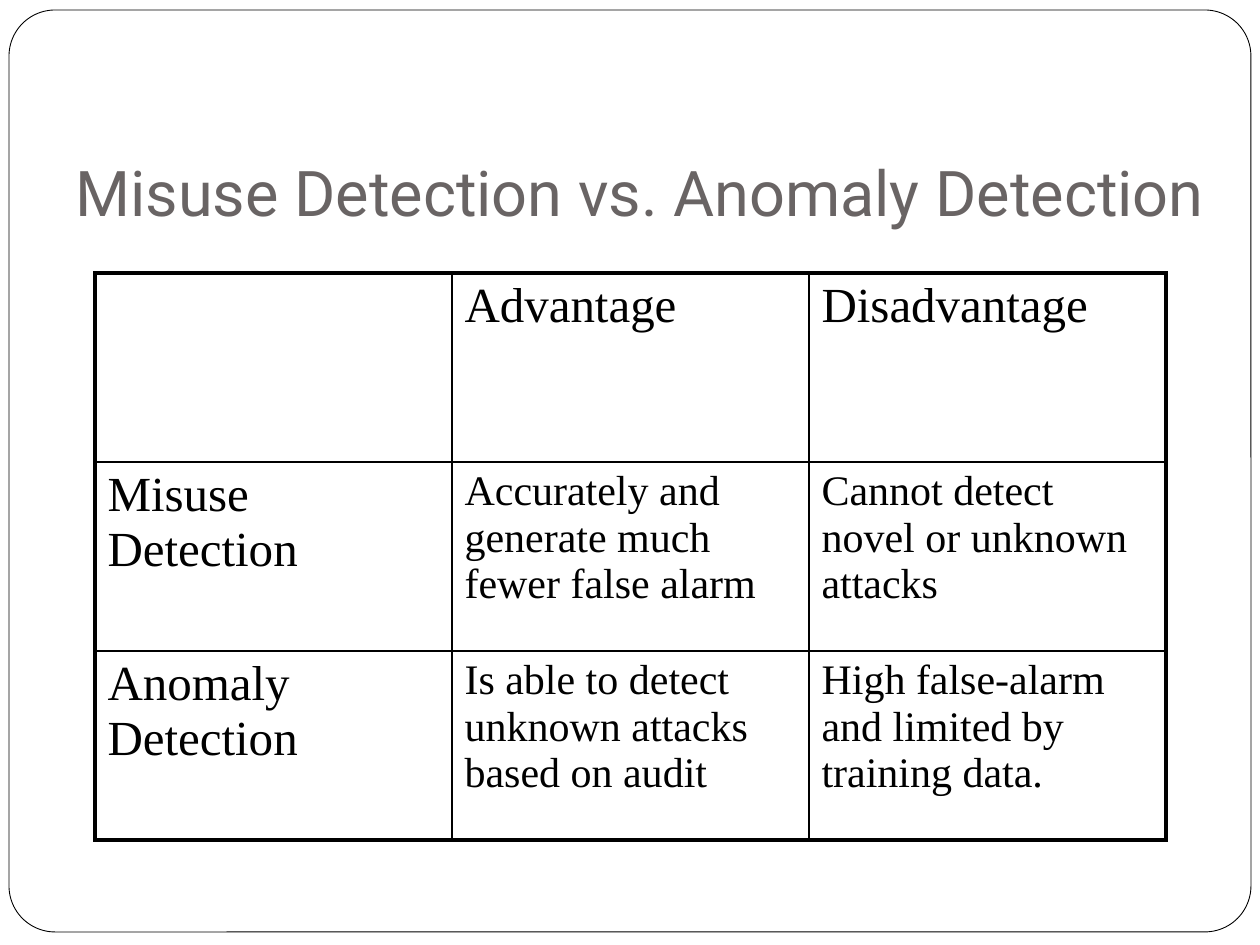
import lxml.etree
import pptx
import pptx.dml.color
import pptx.enum.shapes
import pptx.enum.text
import pptx.oxml.ns
import pptx.util

SCALE = 914400 / 126
COLORS = {"paper": "FFFFFF", "ink": "000000", "title": "696464"}
ROWS = [
    ["", "Advantage", "Disadvantage"],
    ["Misuse Detection", "Accurately and generate much fewer false alarm",
     "Cannot detect novel or unknown attacks"],
    ["Anomaly Detection", "Is able to detect unknown attacks based on audit",
     "High false-alarm and limited by training data."],
]
HEAD = {"name": "Times New Roman", "size": pptx.util.Pt(28)}
BODY = {"name": "Times New Roman", "size": pptx.util.Pt(24)}
TITLE = {"name": "Roboto", "size": pptx.util.Pt(36)}


def emu(px):
    return pptx.util.Emu(round(px * SCALE))


def color(name):
    return pptx.dml.color.RGBColor.from_string(COLORS[name])


def apply(target, values):
    for name, value in values.items():
        setattr(target, name, value)


def write(frame, text, font, ink):
    run = frame.paragraphs[0].add_run()
    run.text = text
    apply(run.font, font)
    run.font.color.rgb = color(ink)


def add_frame(slide, box):
    kind = pptx.enum.shapes.MSO_SHAPE.ROUNDED_RECTANGLE
    shape = slide.shapes.add_shape(kind, *map(emu, box))
    shape.adjustments[0] = 0.05
    shape.shadow.inherit = False
    shape.fill.solid()
    shape.fill.fore_color.rgb = color("paper")
    shape.line.color.rgb = color("ink")
    shape.line.width = pptx.util.Pt(0.5)


def add_title(slide, box, text):
    frame = slide.shapes.add_textbox(*map(emu, box)).text_frame
    apply(frame, {
        "word_wrap": True,
        "vertical_anchor": pptx.enum.text.MSO_ANCHOR.BOTTOM,
        "margin_bottom": pptx.util.Inches(0.1),
    })
    write(frame, text, TITLE, "title")


def set_edges(cell, widths):
    """Draw the cell's borders; widths are points keyed by side."""
    props = cell._tc.get_or_add_tcPr()
    for place, (side, width) in enumerate(widths.items()):
        line = lxml.etree.Element(pptx.oxml.ns.qn("a:ln" + side),
                                  w=str(pptx.util.Pt(width)))
        fill = lxml.etree.SubElement(line, pptx.oxml.ns.qn("a:solidFill"))
        lxml.etree.SubElement(fill, pptx.oxml.ns.qn("a:srgbClr"),
                              val=COLORS["ink"])
        props.insert(place, line)


def add_grid(slide, box, rows):
    high, wide = len(rows), len(rows[0])
    table = slide.shapes.add_table(high, wide, *map(emu, box)).table
    apply(table, {"first_row": False, "horz_banding": False})
    for column in table.columns:
        column.width = emu(box[2] // wide)
    for row in table.rows:
        row.height = emu(box[3] // high)
    for i, texts in enumerate(rows):
        for j, text in enumerate(texts):
            cell = table.cell(i, j)
            cell.fill.background()
            outer = {"L": j == 0, "R": j == wide - 1,
                     "T": i == 0, "B": i == high - 1}
            set_edges(cell, {side: 2.25 if edge else 1
                             for side, edge in outer.items()})
            if text:
                font = BODY if i and j else HEAD
                write(cell.text_frame, text, font, "ink")


def main():
    deck = pptx.Presentation()
    apply(deck, {"slide_width": emu(1260), "slide_height": emu(945)})
    slide = deck.slides.add_slide(deck.slide_layouts[6])
    add_frame(slide, (9, 10, 1242, 922))
    add_title(slide, (63, 84, 1166, 158),
              "Misuse Detection vs. Anomaly Detection")
    add_grid(slide, (95, 273, 1071, 567), ROWS)
    deck.save("out.pptx")


if __name__ == "__main__":
    main()
